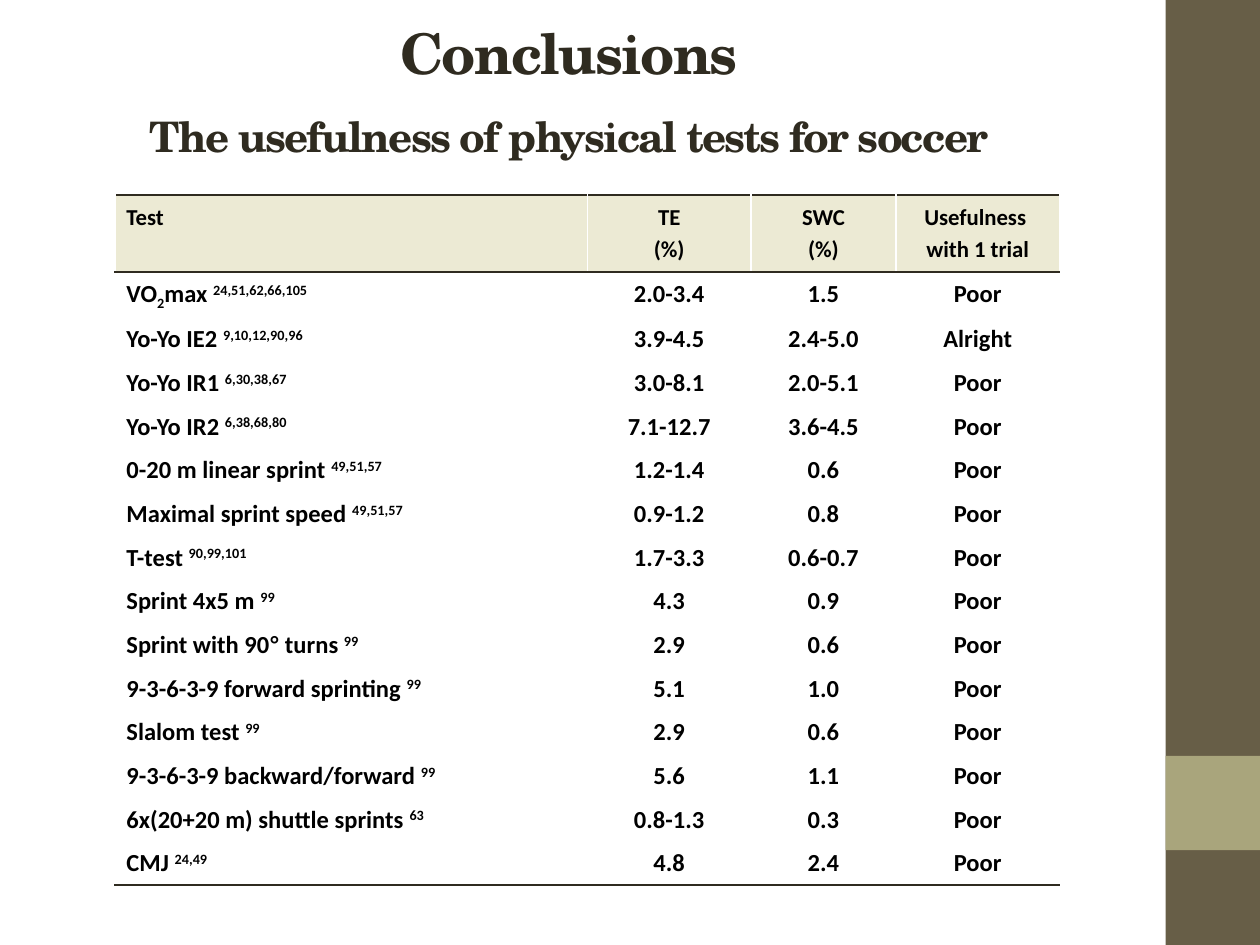
from lxml.etree import SubElement
from pptx import Presentation
from pptx.dml.color import RGBColor
from pptx.enum.shapes import MSO_SHAPE as Shape
from pptx.enum.text import MSO_ANCHOR as Anchor, PP_ALIGN as Align
from pptx.oxml.ns import qn
from pptx.util import Cm, Pt

WHITE = RGBColor(0xFF, 0xFF, 0xFF)
BLACK = RGBColor(0, 0, 0)
INK = RGBColor(0x2F, 0x2B, 0x20)
CREAM = RGBColor(0xEC, 0xEA, 0xD4)
BROWN = RGBColor(0x67, 0x5E, 0x47)
OLIVE = RGBColor(0xA9, 0xA5, 0x7C)

TITLE_FONT = "TeX Gyre Schola"
TABLE_FONT = "Calibri"
SUBSCRIPT, SUPERSCRIPT = -25, 30

COLUMN_WIDTHS = [9.52, 3.3, 2.92, 3.3]
HEADER_HEIGHT, ROW_HEIGHT = 1.55, 0.88
HEADERS = ["Test", "TE\n(%)", "SWC\n(%)", "Usefulness \nwith 1 trial"]
TESTS = [
    ("VO_2_max", "24,51,62,66,105", "2.0-3.4", "1.5", "Poor"),
    ("Yo-Yo IE2", "9,10,12,90,96", "3.9-4.5", "2.4-5.0", "Alright"),
    ("Yo-Yo IR1", "6,30,38,67", "3.0-8.1", "2.0-5.1", "Poor"),
    ("Yo-Yo IR2", "6,38,68,80", "7.1-12.7", "3.6-4.5", "Poor"),
    ("0-20 m linear sprint", "49,51,57", "1.2-1.4", "0.6", "Poor"),
    ("Maximal sprint speed", "49,51,57", "0.9-1.2", "0.8", "Poor"),
    ("T-test", "90,99,101", "1.7-3.3", "0.6-0.7", "Poor"),
    ("Sprint 4x5 m", "99", "4.3", "0.9", "Poor"),
    ("Sprint with 90° turns", "99", "2.9", "0.6", "Poor"),
    ("9-3-6-3-9 forward sprinting", "99", "5.1", "1.0", "Poor"),
    ("Slalom test", "99", "2.9", "0.6", "Poor"),
    ("9-3-6-3-9 backward/forward", "99", "5.6", "1.1", "Poor"),
    ("6x(20+20 m) shuttle sprints", "63", "0.8-1.3", "0.3", "Poor"),
    ("CMJ", "24,49", "4.8", "2.4", "Poor"),
]


def style_span(span, font, size, color):
    span.font.name = font
    span.font.size = Pt(size)
    span.font.bold = True
    span.font.color.rgb = color


def add_span(para, text, baseline=0, font=TABLE_FONT):
    span = para.add_run()
    span.text = text
    style_span(span, font, 14, BLACK)
    if baseline:
        span.font._element.set("baseline", str(baseline * 1000))


def add_test_name(para, name, references):
    for index, part in enumerate(name.split("_")):
        before, degree, after = part.partition("°")
        add_span(para, before if degree or index == 1 else before + " " * name.endswith(part),
                 SUBSCRIPT if index == 1 else 0)
        if degree:
            add_span(para, degree, font="Arial")
            add_span(para, after + " ")
    add_span(para, references, SUPERSCRIPT)


def set_borders(cell, top, bottom):
    properties = cell._tc.get_or_add_tcPr()
    sides = {"L": WHITE, "R": WHITE, "T": top, "B": bottom}
    for side, color in sides.items():
        line = SubElement(properties, qn(f"a:ln{side}"), w=str(Pt(1)))
        fill = SubElement(line, qn("a:solidFill"))
        SubElement(fill, qn("a:srgbClr"), val=str(color))


def add_side_band(page, left, top, width, height):
    square = width
    for y, part_height, color in [(top, height, BROWN), (top + height * 0.8, square, OLIVE)]:
        band = page.shapes.add_shape(
            Shape.RECTANGLE, Cm(left), Cm(y), Cm(width), Cm(part_height))
        band.shadow.inherit = False
        band.fill.solid()
        band.fill.fore_color.rgb = color
        band.line.fill.background()


def add_title(page, left, top, width, height):
    box = page.shapes.add_textbox(Cm(left), Cm(top), Cm(width), Cm(height))
    frame = box.text_frame
    frame.word_wrap = True
    frame.vertical_anchor = Anchor.MIDDLE
    frame.text = "Conclusions\nThe usefulness of physical tests for soccer"
    for para, size in zip(frame.paragraphs, (32, 24)):
        para.alignment = Align.CENTER
        span = para.runs[0]
        style_span(span, TITLE_FONT, size, INK)
        span.font._element.set("spc", "-100")
    frame.paragraphs[1].space_before = Pt(14)


def add_results(page, left, top):
    row_count = len(TESTS) + 1
    height = HEADER_HEIGHT + ROW_HEIGHT * len(TESTS)
    table = page.shapes.add_table(
        row_count, len(COLUMN_WIDTHS), Cm(left), Cm(top),
        Cm(sum(COLUMN_WIDTHS)), Cm(height)).table
    table.horz_banding = False
    for column, width in zip(table.columns, COLUMN_WIDTHS):
        column.width = Cm(width)
    for index, row in enumerate(table.rows):
        row.height = Cm(ROW_HEIGHT if index else HEADER_HEIGHT)
        for column, cell in enumerate(row.cells):
            cell.margin_left = cell.margin_right = Cm(0.23)
            cell.margin_top = cell.margin_bottom = Cm(0.1)
            set_borders(cell, INK if index < 2 else WHITE,
                        INK if index in (0, row_count - 1) else WHITE)
            if index == 0:
                cell.fill.solid()
                cell.fill.fore_color.rgb = CREAM
                cell.text_frame.text = HEADERS[column]
            else:
                cell.fill.background()
                name, references, *values = TESTS[index - 1]
                if column:
                    cell.text_frame.text = values[column - 1]
                else:
                    add_test_name(cell.text_frame.paragraphs[0], name, references)
            for para in cell.text_frame.paragraphs:
                para.alignment = Align.CENTER if column else Align.LEFT
                para.line_spacing = 1.07 if index else 1.15
                if column or index == 0:
                    style_span(para.runs[0], TABLE_FONT, 14 if index else 13, BLACK)


def main():
    deck = Presentation()
    deck.slide_width, deck.slide_height = Cm(25.4), Cm(19.05)
    page = deck.slides.add_slide(deck.slide_layouts[6])
    add_side_band(page, 23.5, 0, 1.9, 19.05)
    add_title(page, 0.56, 0.74, 21.82, 2.13)
    add_results(page, 2.32, 3.93)
    deck.save("out.pptx")


if __name__ == "__main__":
    main()
